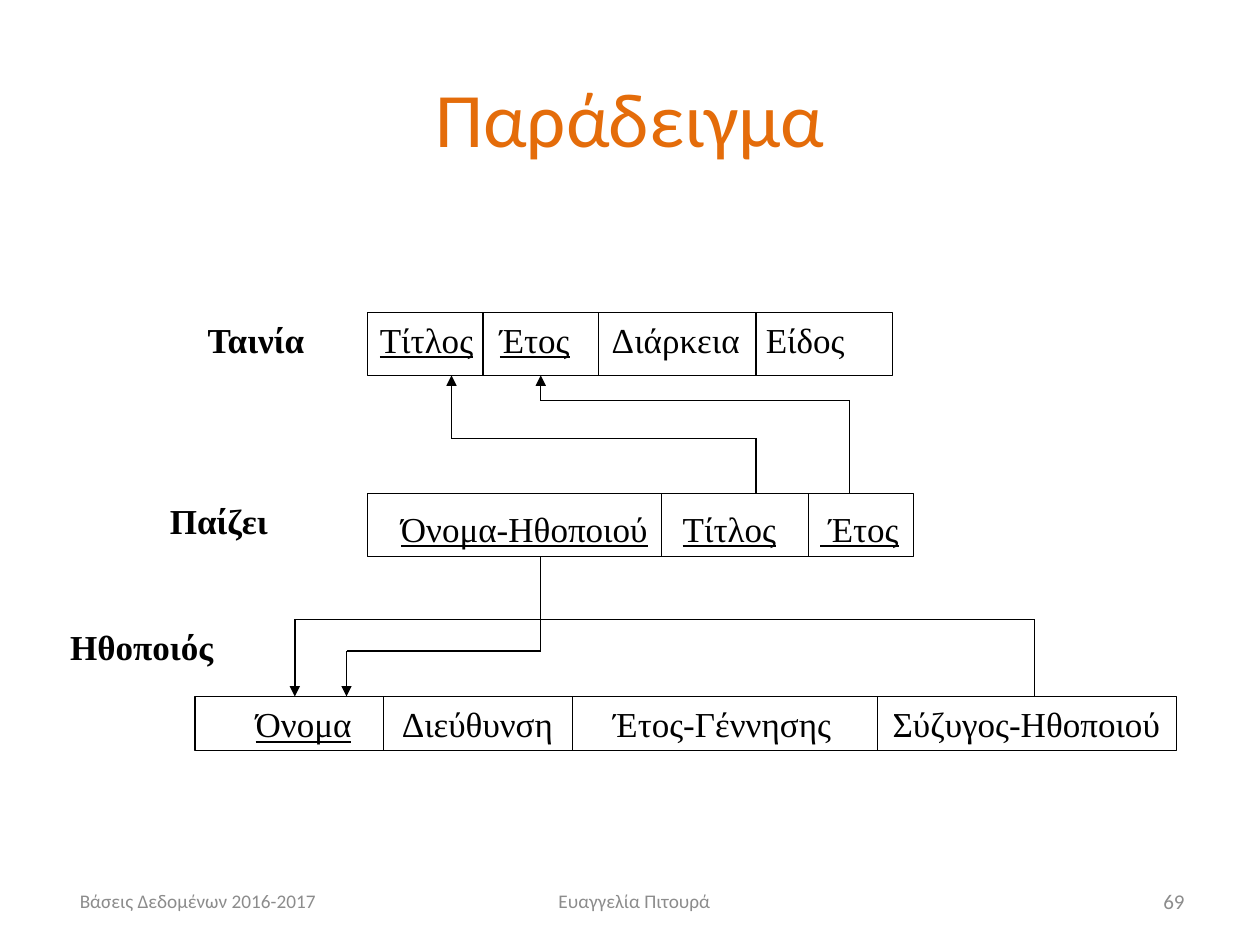
from dataclasses import dataclass
from itertools import pairwise

from lxml.etree import SubElement
from pptx import Presentation
from pptx.dml.color import RGBColor as Rgb
from pptx.enum.shapes import MSO_CONNECTOR as Conn, MSO_SHAPE as Shape
from pptx.enum.text import MSO_ANCHOR as Anchor, PP_ALIGN as Align
from pptx.oxml.ns import qn
from pptx.util import Pt


@dataclass(frozen=True)
class Theme:
    """Colours, fonts and sizes of the slide."""
    ink: Rgb = Rgb(0, 0, 0)
    accent: Rgb = Rgb(0xE4, 0x6C, 0x0A)
    muted: Rgb = Rgb(0x8C, 0x8C, 0x8C)
    sans: str = "Calibri"
    serif: str = "Times New Roman"
    title: float = 44
    body: float = 20
    foot: float = 11
    page: float = 12
    rule: float = 0.75


THEME = Theme()


def style(run, size, color, face):
    """Set the size, colour and font of a run."""
    run.font.size = Pt(size)
    run.font.color.rgb = color
    run.font.name = face


def add_box(slide, box, anchor):
    """Add an empty wrapping text box and return its first paragraph."""
    frame = slide.shapes.add_textbox(*map(Pt, box)).text_frame
    frame.word_wrap = True
    frame.vertical_anchor = anchor
    return frame.paragraphs[0]


def add_text(slide, box, text, size, color, align):
    """Add one line of sans text, centred vertically in the box."""
    para = add_box(slide, box, Anchor.MIDDLE)
    para.text = text
    para.alignment = align
    style(para.runs[0], size, color, THEME.sans)


def add_row(slide, box, stops=()):
    """Add a text row with half a line before it and optional tab stops."""
    para = add_box(slide, box, Anchor.TOP)
    props = para._p.get_or_add_pPr()
    SubElement(SubElement(props, qn("a:spcBef")), qn("a:spcPct"), val="50000")
    if stops:
        tabs = SubElement(props, qn("a:tabLst"))
        for stop in stops:
            SubElement(tabs, qn("a:tab"), pos=str(int(Pt(stop))), algn="l")
    return para


def add_line(slide, start, end, arrow=False):
    """Draw a thin straight line, with an arrowhead at its end if asked."""
    line = slide.shapes.add_connector(Conn.STRAIGHT, *map(Pt, (*start, *end)))
    line.line.color.rgb = THEME.ink
    line.line.width = Pt(THEME.rule)
    if arrow:
        SubElement(line.line._get_or_add_ln(), qn("a:tailEnd"), type="triangle")
    SubElement(line._element.spPr, qn("a:effectLst"))


def add_label(slide, box, name):
    """Add the bold name of a relation."""
    para = add_row(slide, box)
    para.text = name
    run = para.runs[0]
    style(run, THEME.body, THEME.ink, THEME.serif)
    run.font.bold = True


def add_table(slide, box, cuts, inset, fields, stops, keys):
    """Draw a relation as a frame with dividers and its fields, keys underlined."""
    left, top, width, height = box
    frame = slide.shapes.add_shape(Shape.RECTANGLE, *map(Pt, box))
    frame.shadow.inherit = False
    frame.fill.background()
    frame.line.color.rgb = THEME.ink
    frame.line.width = Pt(THEME.rule)
    for cut in cuts:
        add_line(slide, (left + cut, top), (left + cut, top + height))
    dx, dy = inset
    para = add_row(slide, (left + dx, top + dy, width + 20 - dx, 31), stops)
    for i, field in enumerate(fields):
        if i:
            style(para.add_run(), THEME.body, THEME.ink, THEME.serif)
            para.runs[-1].text = "\t"
        run = para.add_run()
        run.text = field
        style(run, THEME.body, THEME.ink, THEME.serif)
        run.font.underline = i in keys


def add_link(slide, start, bend, end):
    """Draw a foreign key as three segments that turn at height bend."""
    (x, _), (tip, _) = start, end
    stops = [start, (x, bend), (tip, bend), end]
    for a, b in pairwise(stops):
        add_line(slide, a, b, arrow=b == end)


def add_schema(slide, box):
    """Place the three relations and the foreign keys between them."""
    x, y, _, _ = box
    add_label(slide, (x + 78.5, y, 84, 31), "Ταινία")
    add_label(slide, (x + 57, y + 103.5, 108, 31), "Παίζει")
    add_label(slide, (x, y + 175.5, 107, 31), "Ηθοποιός")
    add_table(slide, (x + 177, y, 300, 36), (66, 132, 222), (0, 0),
              ("Τίτλος", "Έτος", "Διάρκεια", "Είδος"),
              (68.5, 132.5, 220.5), (0, 1))
    add_table(slide, (x + 177, y + 103.5, 312, 36), (168, 252), (12, 4.5),
              ("Όνομα-Ηθοποιού", "Τίτλος", " Έτος"),
              (161, 239.5), (0, 1, 2))
    add_table(slide, (x + 78.5, y + 219.5, 561, 31), (107.5, 215.5, 390),
              (27.5, 0),
              ("Όνομα", "Διεύθυνση", "Έτος-Γέννησης", "Σύζυγος-Ηθοποιού"),
              (83.5, 204.5, 364), (0,))
    links = (((399, 103.5), 72, (225, 36)),
             ((452.5, 103.5), 50.5, (276, 36)),
             ((276, 139.5), 193.5, (165, 219.5)),
             ((558, 219.5), 175.5, (135.5, 219.5)))
    for (ax, ay), bend, (bx, by) in links:
        add_link(slide, (x + ax, y + ay), y + bend, (x + bx, y + by))


def add_foot(slide, box):
    """Place the course, the author and the page number along the foot."""
    x, y, width, height = box
    add_text(slide, (x, y, 168, height), "Βάσεις Δεδομένων 2016-2017",
             THEME.foot, THEME.muted, Align.LEFT)
    add_text(slide, (x + 210, y, 228, height), "Ευαγγελία Πιτουρά",
             THEME.foot, THEME.muted, Align.CENTER)
    add_text(slide, (x + width - 168, y, 168, height), "69",
             THEME.page, THEME.muted, Align.RIGHT)


def main():
    """Build the slide and save it."""
    deck = Presentation()
    deck.slide_width, deck.slide_height = Pt(720), Pt(540)
    slide = deck.slides.add_slide(deck.slide_layouts[6])
    add_text(slide, (36, 21.6, 648, 90), "Παράδειγμα",
             THEME.title, THEME.accent, Align.CENTER)
    add_schema(slide, (33, 178.5, 640, 250.5))
    add_foot(slide, (38.5, 500.5, 645.5, 28.75))
    deck.save("out.pptx")


if __name__ == "__main__":
    main()
